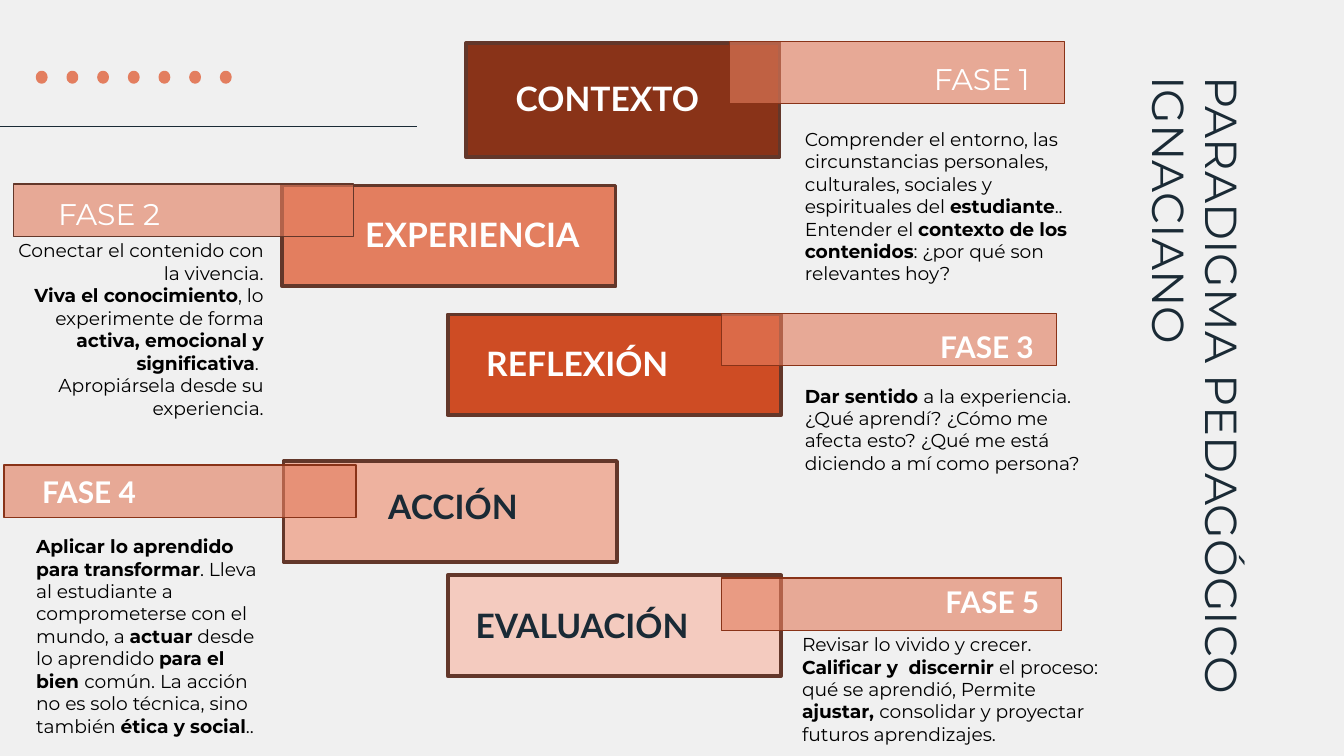
from lxml.etree import SubElement
from pptx import Presentation
from pptx.dml.color import RGBColor
from pptx.enum.shapes import MSO_CONNECTOR as Connector, MSO_SHAPE as Shape
from pptx.enum.text import MSO_ANCHOR as Anchor, PP_ALIGN as Align
from pptx.oxml.ns import qn
from pptx.util import Pt

COLORS = {
    "background": "F0F0F0",
    "ink": "1A2A35",
    "black": "000000",
    "white": "FFFFFF",
    "brown": "63372A",
    "rust": "893318",
    "coral": "E37E5F",
    "orange": "CE4C24",
    "salmon": "EEB29F",
    "blush": "F4CBBF",
}
BAND_OPACITY = 62

PHASES = [
    {
        "box": (249.8, 23, 167.8, 61.2), "fill": "rust",
        "name": "CONTEXTO", "name_at": (19.4, 15.1), "name_color": "white",
        "band": (141.1, -0.7, 179.3, 33.1), "band_line": "rust",
        "tag": "FASE 1", "tag_at": (243.4, 5.8, 76.3), "tag_font": "Montserrat",
        "tag_align": Align.LEFT,
        "text_at": (174.3, 38.2, 162), "text_align": Align.LEFT, "indent": (0, 0),
        "text": [
            "Comprender el entorno, las circunstancias personales, culturales, "
            "sociales y espirituales del **estudiante**..",
            "Entender el **contexto de los contenidos**: ¿por qué son relevantes hoy?",
        ],
    },
    {
        "box": (151.2, 99.4, 178.6, 54), "fill": "coral",
        "name": "EXPERIENCIA", "name_at": (37.4, 11.5), "name_color": "white",
        "band": (-144, -0.8, 182.2, 28.1), "band_line": "brown",
        "tag": "FASE 2", "tag_at": (-138.2, 1.4, 79.9), "tag_font": "Montserrat",
        "tag_align": Align.RIGHT,
        "text_at": (-165.6, 21.6, 162.7), "text_align": Align.RIGHT, "indent": (36, -25.2),
        "text": [
            "Conectar el contenido con la vivencia.",
            "**Viva el conocimiento**, lo experimente de forma **activa, emocional y "
            "significativa**.  Apropiársela desde su experiencia.",
        ],
    },
    {
        "box": (239.8, 168.5, 178.6, 54), "fill": "orange",
        "name": "REFLEXIÓN", "name_at": (13.6, 11.5), "name_color": "white",
        "band": (146.8, -0.7, 179.3, 28.1), "band_line": "rust",
        "tag": "FASE 3", "tag_at": (249.8, 3.6, 71.3), "tag_font": "Lato",
        "tag_align": Align.RIGHT,
        "text_at": (184.3, 30.2, 162), "text_align": Align.LEFT, "indent": (0, 0),
        "text": [
            "**Dar sentido **a la experiencia. ¿Qué aprendí? ¿Cómo me afecta esto? "
            "¿Qué me está diciendo a mí como persona?",
        ],
    },
    {
        "box": (151.9, 247, 178.6, 54), "fill": "salmon",
        "name": "ACCIÓN", "name_at": (49, 10), "name_color": "ink",
        "band": (-149.7, 2.1, 188.6, 28.1), "band_line": "rust",
        "tag": "FASE 4", "tag_at": (-143.3, 2.8, 71.3), "tag_font": "Lato",
        "tag_align": Align.RIGHT,
        "text_at": (-167.7, 32.4, 162.7), "text_align": Align.LEFT, "indent": (28.1, 0),
        "text": [
            "**Aplicar lo aprendido para transformar**. Lleva al estudiante a "
            "comprometerse con el mundo, a **actuar** desde lo aprendido **para el "
            "bien **común. La acción no es solo técnica, sino también "
            "**ética y social**..",
        ],
    },
    {
        "box": (239.8, 308.2, 178.6, 54), "fill": "blush",
        "name": "EVALUACIÓN", "name_at": (7.9, 12.2), "name_color": "ink",
        "band": (146.8, 1.4, 182.2, 28.1), "band_line": "rust",
        "tag": "FASE 5", "tag_at": (252.7, 0.7, 71.3), "tag_font": "Lato",
        "tag_align": Align.RIGHT,
        "text_at": (182.8, 23.7, 177.8), "text_align": Align.LEFT, "indent": (0, 0),
        "text": [
            "Revisar lo vivido y crecer.",
            "**Calificar y  discernir **el proceso: qué se aprendió, Permite "
            "**ajustar, **consolidar y proyectar futuros aprendizajes.",
        ],
    },
]


def color(name):
    return RGBColor.from_string(COLORS[name])


def points(box):
    return [Pt(value) for value in box]


def set_all(target, values):
    for key, value in values.items():
        setattr(target, key, value)


def add_figure(shapes, kind, box, fill, line, weight, opacity=None):
    shape = shapes.add_shape(kind, *points(box))
    shape.shadow.inherit = False
    shape.fill.solid()
    shape.fill.fore_color.rgb = color(fill)
    shape.line.color.rgb = color(line)
    shape.line.width = Pt(weight)
    if opacity:
        fill_color = shape.fill._xPr.find(qn("a:solidFill"))[0]
        SubElement(fill_color, qn("a:alpha"), val=str(opacity * 1000))


def add_text(slide, box, lines, size, font, ink, bold=False, align=Align.LEFT,
             anchor=Anchor.TOP, margin=7.2, indent=(0, 0)):
    shape = slide.shapes.add_textbox(*points(box))
    frame = shape.text_frame
    set_all(frame, {
        "word_wrap": True, "vertical_anchor": anchor,
        "margin_left": Pt(7.2), "margin_right": Pt(7.2),
        "margin_top": Pt(margin), "margin_bottom": Pt(margin),
    })
    for number, line in enumerate(lines):
        paragraph = frame.add_paragraph() if number else frame.paragraphs[0]
        paragraph.alignment = align
        properties = paragraph._p.get_or_add_pPr()
        for key, value in zip(("marL", "indent"), indent):
            properties.set(key, str(Pt(value)))
        for position, part in enumerate(line.split("**")):
            if part:
                run = paragraph.add_run()
                run.text = part
                set_all(run.font, {
                    "size": Pt(size), "name": font, "bold": bold or position % 2 == 1,
                })
                run.font.color.rgb = color(ink)
    return shape


def add_phase(slide, phase):
    left, top, width, height = phase["box"]

    def place(x, y, *size):
        return left + x, top + y, *size

    add_figure(slide.shapes, Shape.RECTANGLE, phase["box"], phase["fill"], "brown", 2)
    add_text(slide, place(*phase["name_at"], 153.4, 28.8), [phase["name"]],
             18, "Lato", phase["name_color"], bold=True, margin=3.6)
    add_figure(slide.shapes, Shape.RECTANGLE, place(*phase["band"]), "coral",
               phase["band_line"], 0.75, BAND_OPACITY)
    add_text(slide, place(*phase["tag_at"], 30.2), [phase["tag"]], 16,
             phase["tag_font"], "white", bold=phase["tag_font"] == "Lato",
             align=phase["tag_align"], anchor=Anchor.BOTTOM)
    add_text(slide, place(*phase["text_at"], 87.8), phase["text"], 10, "Montserrat",
             "black", align=phase["text_align"], indent=phase["indent"])


def add_ornament(slide, left, top, width, height):
    group = slide.shapes.add_group_shape()
    for number in range(7):
        dot = (left + 20.2 + number * 16.44, top, 4.3, 5)
        add_figure(group.shapes, Shape.OVAL, dot, "coral", "coral", 2)
    bottom = top + height
    rule = group.shapes.add_connector(
        Connector.STRAIGHT, *points((left, bottom, left + width, bottom)))
    rule.line.color.rgb = color("ink")
    rule.line.width = Pt(0.75)
    SubElement(rule._element.spPr, qn("a:effectLst"))


def add_title(slide, box):
    title = add_text(slide, box, ["PARADIGMA PEDAGÓGICO IGNACIANO"], 24,
                     "Montserrat", "ink", anchor=Anchor.MIDDLE)
    title.rotation = 90


def main():
    presentation = Presentation()
    set_all(presentation, {"slide_width": Pt(720), "slide_height": Pt(405)})
    slide = presentation.slides.add_slide(presentation.slide_layouts[6])
    slide.background.fill.solid()
    slide.background.fill.fore_color.rgb = color("background")
    for phase in PHASES:
        add_phase(slide, phase)
    add_title(slide, (465.1, 190.8, 352.1, 38.2))
    add_ornament(slide, 0, 38.9, 223.2, 28.8)
    presentation.save("out.pptx")


if __name__ == "__main__":
    main()
